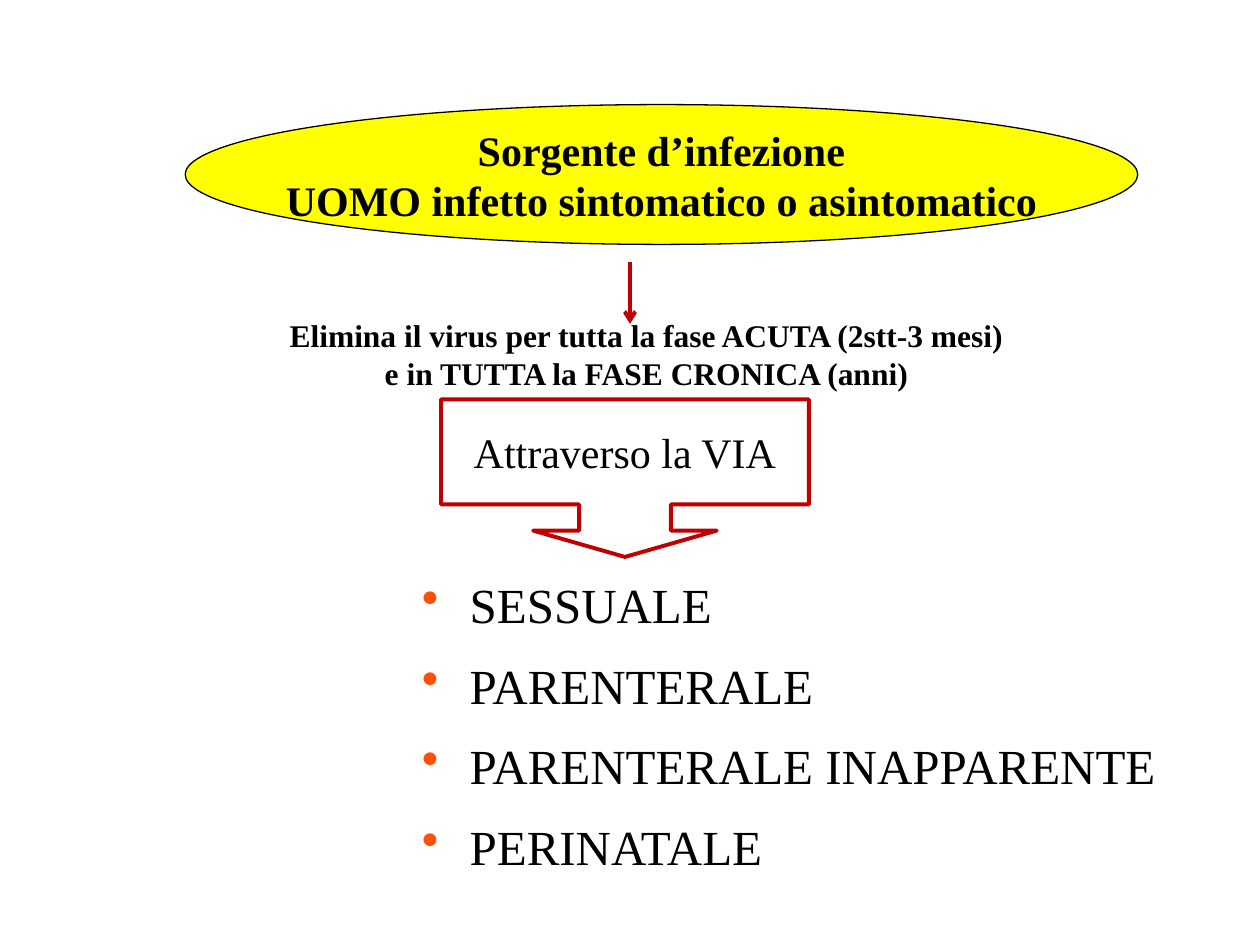
from lxml.etree import SubElement
from pptx import Presentation
from pptx.dml.color import RGBColor
from pptx.enum.shapes import MSO_CONNECTOR, MSO_SHAPE
from pptx.enum.text import MSO_ANCHOR, MSO_AUTO_SIZE, PP_ALIGN
from pptx.oxml.ns import qn
from pptx.util import Inches, Pt

SOURCE = ["Sorgente d’infezione", "UOMO infetto sintomatico o asintomatico"]
SHEDDING = [
    "Elimina il virus per tutta la fase ACUTA (2stt-3 mesi)",
    "e in TUTTA la FASE CRONICA (anni)",
]
ROUTE = ["Attraverso la VIA"]
ROUTES = ["SESSUALE", "PARENTERALE", "PARENTERALE INAPPARENTE", "PERINATALE"]

THEME = {
    "font": "Times New Roman",
    "text": RGBColor(0, 0, 0),
    "source": RGBColor(0xFF, 0xFF, 0),
    "accent": RGBColor(0xC0, 0, 0),
    "bullet": "FF5008",
    "heading_size": Pt(24),
    "note_size": Pt(18),
    "list_size": Pt(28),
    "outline": Pt(0.75),
    "thick": Pt(2.25),
}
PLACES = {
    "source": (1.47, 0.83, 7.56, 1.11),
    "shedding": (2.17, 2.46, 5.92, 0.71),
    "route": (3.5, 3.17, 2.92, 1.25),
    "routes": (3.25, 4.42, 7, 2.92),
}
ARROW = (5, 2.08, 5, 2.57)
CALLOUT_ADJUSTMENTS = (0.583, 0.583, 0.167, 0.667)
CENTRED = {"alignment": PP_ALIGN.CENTER}
LISTED = {"alignment": PP_ALIGN.LEFT, "line_spacing": 1.2}


def set_all(target, values):
    for name, value in values.items():
        setattr(target, name, value)


def inches(numbers):
    return [Inches(number) for number in numbers]


def write(shape, lines, size, bold=False, layout=CENTRED, **frame_format):
    frame = shape.text_frame
    set_all(frame, {"word_wrap": False, **frame_format})
    frame.text = "\n".join(lines)
    for paragraph in frame.paragraphs:
        set_all(paragraph, layout)
        for run in paragraph.runs:
            set_all(run.font, {"name": THEME["font"], "size": size, "bold": bold})
            run.font.color.rgb = THEME["text"]
    return frame


def add_outlined(slide, preset, place, colour, width, fill=None):
    shape = slide.shapes.add_shape(preset, *inches(place))
    shape.shadow.inherit = False
    if fill is None:
        shape.fill.background()
    else:
        shape.fill.solid()
        shape.fill.fore_color.rgb = fill
    shape.line.color.rgb = colour
    shape.line.width = width
    return shape


def add_bullet(paragraph):
    properties = paragraph._p.get_or_add_pPr()
    properties.set("marL", str(Inches(0.38)))
    properties.set("indent", str(Inches(-0.38)))
    for outer, inner, value in (
        ("a:spcBef", "a:spcPct", "20000"),
        ("a:buClr", "a:srgbClr", THEME["bullet"]),
    ):
        SubElement(SubElement(properties, qn(outer)), qn(inner), val=value)
    SubElement(properties, qn("a:buChar"), char="•")


def add_arrow(slide, ends):
    arrow = slide.shapes.add_connector(MSO_CONNECTOR.STRAIGHT, *inches(ends))
    arrow.line.color.rgb = THEME["accent"]
    arrow.line.width = THEME["thick"]
    SubElement(arrow.line._get_or_add_ln(), qn("a:tailEnd"), type="arrow")
    SubElement(arrow._element.spPr, qn("a:effectLst"))


def main():
    deck = Presentation()
    set_all(deck, {"slide_width": Inches(10), "slide_height": Inches(7.5)})
    slide = deck.slides.add_slide(deck.slide_layouts[6])

    routes = slide.shapes.add_textbox(*inches(PLACES["routes"]))
    for paragraph in write(
        routes, ROUTES, THEME["list_size"], layout=LISTED, word_wrap=True
    ).paragraphs:
        add_bullet(paragraph)

    source = add_outlined(
        slide, MSO_SHAPE.OVAL, PLACES["source"],
        THEME["text"], THEME["outline"], THEME["source"],
    )
    write(source, SOURCE, THEME["heading_size"], True, vertical_anchor=MSO_ANCHOR.MIDDLE)

    shedding = slide.shapes.add_textbox(*inches(PLACES["shedding"]))
    write(
        shedding, SHEDDING, THEME["note_size"], True,
        auto_size=MSO_AUTO_SIZE.SHAPE_TO_FIT_TEXT,
    )

    route = add_outlined(
        slide, MSO_SHAPE.DOWN_ARROW_CALLOUT, PLACES["route"],
        THEME["accent"], THEME["thick"],
    )
    for index, adjustment in enumerate(CALLOUT_ADJUSTMENTS):
        route.adjustments[index] = adjustment
    write(route, ROUTE, THEME["heading_size"], vertical_anchor=MSO_ANCHOR.MIDDLE)

    add_arrow(slide, ARROW)
    deck.save("out.pptx")


if __name__ == "__main__":
    main()
